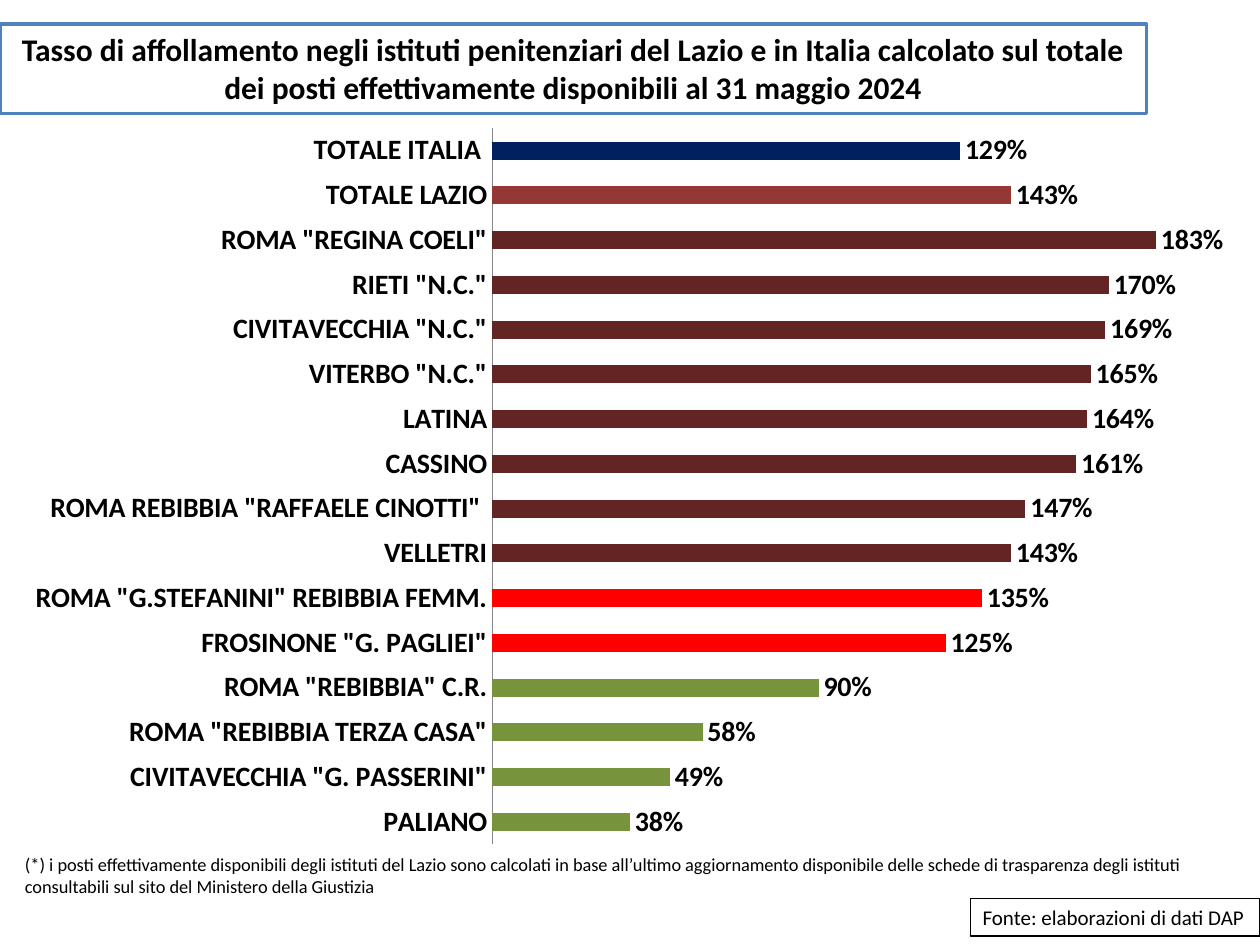
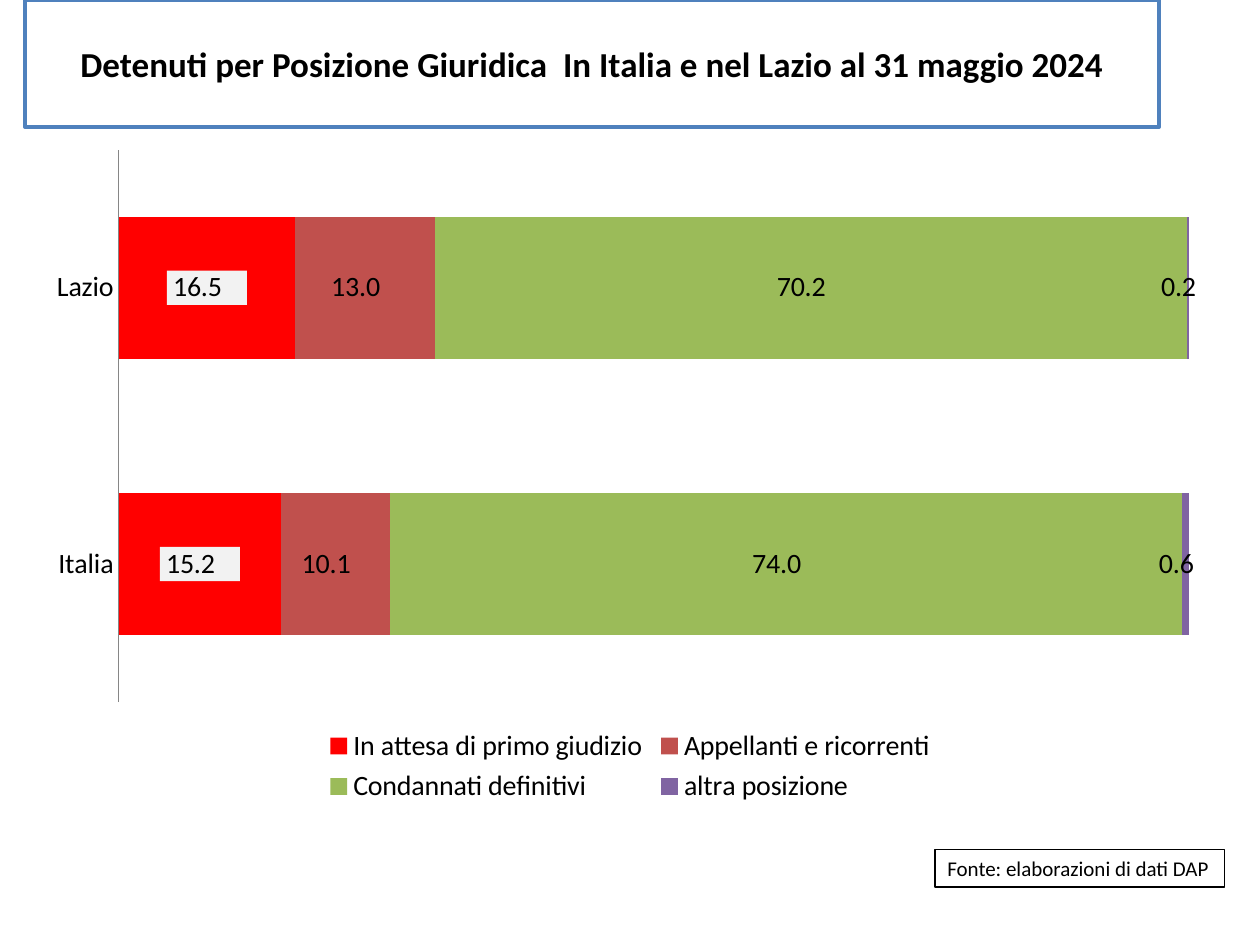
from dataclasses import dataclass

from lxml.etree import SubElement
from pptx import Presentation
from pptx.chart.data import CategoryChartData
from pptx.dml.color import RGBColor
from pptx.enum.chart import XL_CHART_TYPE, XL_LABEL_POSITION, XL_LEGEND_POSITION, XL_TICK_MARK
from pptx.enum.shapes import MSO_SHAPE
from pptx.enum.text import MSO_ANCHOR, PP_ALIGN
from pptx.oxml import parse_xml
from pptx.oxml.ns import nsdecls, qn
from pptx.util import Emu, Pt

PX = 9144


@dataclass(frozen=True)
class Theme:
    font: str = "Calibri"
    ink: str = "000000"
    paper: str = "FFFFFF"
    title_border: str = "4F81BD"
    axis: str = "868686"
    label_back: str = "F2F2F2"
    italy: str = "002060"
    lazio: str = "953735"
    severe: str = "632523"
    over: str = "FF0000"
    within: str = "77933C"
    appeal: str = "C0504D"
    definitive: str = "9BBB59"
    other: str = "8064A2"
    long_title_size: float = 18
    title_size: float = 20
    chart_size: float = 16
    source_size: float = 12
    note_size: float = 10.5


THEME = Theme()
SOURCE = "Fonte: elaborazioni di dati DAP"
ONE_DECIMAL = r'_-* #,##0.0\ _€_-;\-* #,##0.0\ _€_-;_-* "-"??\ _€_-;_-@_-'
OCCUPANCY = [
    ("PALIANO", 0.38, THEME.within),
    ('CIVITAVECCHIA "G. PASSERINI"', 0.49, THEME.within),
    ('ROMA "REBIBBIA TERZA CASA"', 0.58, THEME.within),
    ('ROMA "REBIBBIA" C.R.', 0.90, THEME.within),
    ('FROSINONE "G. PAGLIEI"', 1.25, THEME.over),
    ('ROMA "G.STEFANINI" REBIBBIA FEMM.', 1.35, THEME.over),
    ("VELLETRI", 1.43, THEME.severe),
    ('ROMA REBIBBIA "RAFFAELE CINOTTI" ', 1.47, THEME.severe),
    ("CASSINO", 1.61, THEME.severe),
    ("LATINA", 1.64, THEME.severe),
    ('VITERBO "N.C."', 1.65, THEME.severe),
    ('CIVITAVECCHIA "N.C."', 1.69, THEME.severe),
    ('RIETI "N.C."', 1.70, THEME.severe),
    ('ROMA "REGINA COELI"', 1.83, THEME.severe),
    ("TOTALE LAZIO", 1.43, THEME.lazio),
    ("TOTALE ITALIA ", 1.29, THEME.italy),
]
LEGAL_STATUS = [
    ("In attesa di primo giudizio", (16.5, 15.2), THEME.over),
    ("Appellanti e ricorrenti", (13.0, 10.1), THEME.appeal),
    ("Condannati definitivi", (70.2, 74.0), THEME.definitive),
    ("altra posizione", (0.2, 0.6), THEME.other),
]


def paint(fill, color):
    fill.solid()
    fill.fore_color.rgb = RGBColor.from_string(color)


def style_font(font, size, bold=False):
    font.name, font.size, font.bold = THEME.font, Pt(size), bold
    font.color.rgb = RGBColor.from_string(THEME.ink)


def write(frame, text, size, bold=False, align=PP_ALIGN.LEFT, anchor=MSO_ANCHOR.TOP, wrap=True):
    frame.word_wrap, frame.vertical_anchor = wrap, anchor
    paragraph = frame.paragraphs[0]
    paragraph.alignment = align
    run = paragraph.add_run()
    run.text = text
    style_font(run.font, size, bold)


def place(parent, x, y, w, h, inner=False):
    """Give a plot area or legend a fixed position as fractions of its chart."""
    layout = parent.find(qn("c:layout"))
    if layout is None:
        layout = parse_xml(f"<c:layout {nsdecls('c')}/>")
        parent.insert(1 if parent.find(qn("c:legendPos")) is not None else 0, layout)
    manual = SubElement(layout, qn("c:manualLayout"))
    settings = [("layoutTarget", "inner")] if inner else []
    settings += [("xMode", "edge"), ("yMode", "edge"), ("x", x), ("y", y), ("w", w), ("h", h)]
    for tag, value in settings:
        SubElement(manual, qn(f"c:{tag}")).set("val", str(value))


class Deck:
    """Holds the style and the current slide."""

    def __init__(self, theme):
        self.theme = theme
        self.presentation = Presentation()
        self.presentation.slide_width = Emu(1000 * PX)
        self.presentation.slide_height = Emu(750 * PX)

    def new_slide(self):
        self.slide = self.presentation.slides.add_slide(self.presentation.slide_layouts[6])

    def framed(self, box, text, border, weight, **format):
        frame = self.slide.shapes.add_shape(MSO_SHAPE.RECTANGLE, *(Emu(n * PX) for n in box))
        frame.shadow.inherit = False
        paint(frame.fill, self.theme.paper)
        paint(frame.line.fill, border)
        frame.line.width = Pt(weight)
        write(frame.text_frame, text, **format)

    def title(self, box, text, **format):
        self.framed(box, text, self.theme.title_border, 2, bold=True, align=PP_ALIGN.CENTER, **format)

    def source(self, x, y):
        self.framed((x, y, 230, 30), SOURCE, self.theme.ink, 0.75,
                    size=self.theme.source_size, wrap=False)

    def note(self, box, text):
        note = self.slide.shapes.add_textbox(*(Emu(n * PX) for n in box))
        write(note.text_frame, text, self.theme.note_size)

    def bars(self, box, kind, categories, series, plot_box, gap, number_format, bold=False):
        data = CategoryChartData()
        data.categories = categories
        for name, values, _ in series:
            data.add_series(name, values)
        chart = self.slide.shapes.add_chart(kind, *(Emu(n * PX) for n in box), data).chart
        style_font(chart.font, self.theme.chart_size, bold)
        chart.has_title = chart.has_legend = False
        chart.value_axis.visible = chart.value_axis.has_major_gridlines = False
        chart.value_axis.minimum_scale = 0
        chart.category_axis.major_tick_mark = XL_TICK_MARK.NONE
        paint(chart.category_axis.format.line.fill, self.theme.axis)
        plot = chart.plots[0]
        plot.vary_by_categories, plot.gap_width = False, gap
        for bars, (_, _, color) in zip(plot.series, series):
            paint(bars.format.fill, color)
            bars.invert_if_negative = False
            labels = bars.data_labels
            labels.show_value = True
            labels.number_format, labels.number_format_is_linked = number_format, False
            style_font(labels.font, self.theme.chart_size, bold)
        place(chart.element.find(".//" + qn("c:plotArea")), *plot_box, inner=True)
        return chart

    def legend(self, chart, box):
        chart.has_legend = True
        chart.legend.position = XL_LEGEND_POSITION.BOTTOM
        chart.legend.include_in_layout = False
        style_font(chart.legend.font, self.theme.chart_size)
        place(chart.element.find(".//" + qn("c:legend")), *box)

    def label_background(self, series):
        number_format = series.data_labels._element.find(qn("c:numFmt"))
        number_format.addnext(parse_xml(
            f'<c:spPr {nsdecls("c", "a")}><a:solidFill>'
            f'<a:srgbClr val="{self.theme.label_back}"/></a:solidFill></c:spPr>'))


def occupancy_slide(deck):
    deck.new_slide()
    deck.title((0, 19, 910, 71),
               "Tasso di affollamento negli istituti penitenziari del Lazio e in Italia calcolato "
               "sul totale dei posti effettivamente disponibili al 31 maggio 2024",
               size=THEME.long_title_size)
    deck.note((10, 672, 976, 45),
              "(*) i posti effettivamente disponibili degli istituti del Lazio sono calcolati in base "
              "all’ultimo aggiornamento disponibile delle schede di trasparenza degli istituti "
              "consultabili sul sito del Ministero della Giustizia")
    deck.source(770, 713)
    prisons, rates, colors = zip(*OCCUPANCY)
    chart = deck.bars((10, 90, 976, 592), XL_CHART_TYPE.BAR_CLUSTERED, prisons,
                      [("Tasso di affollamento", rates, THEME.severe)],
                      (0.39, 0.02, 0.59, 0.96), gap=150, number_format="0%", bold=True)
    chart.value_axis.maximum_scale = 2
    rate_bars = chart.plots[0].series[0]
    rate_bars.data_labels.position = XL_LABEL_POSITION.OUTSIDE_END
    for index, color in enumerate(colors):
        paint(rate_bars.points[index].format.fill, color)


def legal_status_slide(deck):
    deck.new_slide()
    deck.title((20, 0, 900, 101),
               "Detenuti per Posizione Giuridica  In Italia e nel Lazio al 31 maggio 2024",
               size=THEME.title_size, anchor=MSO_ANCHOR.MIDDLE)
    deck.source(742, 674)
    chart = deck.bars((28, 108, 944, 535), XL_CHART_TYPE.BAR_STACKED_100, ["Lazio", "Italia"],
                      LEGAL_STATUS, (0.07, 0.02, 0.9, 0.82), gap=95, number_format=ONE_DECIMAL)
    chart.plots[0].overlap = 100
    chart.category_axis.reverse_order = True
    deck.label_background(chart.plots[0].series[0])
    deck.legend(chart, (0.24, 0.87, 0.52, 0.13))


def main():
    deck = Deck(THEME)
    occupancy_slide(deck)
    legal_status_slide(deck)
    deck.presentation.save("out.pptx")


if __name__ == "__main__":
    main()
